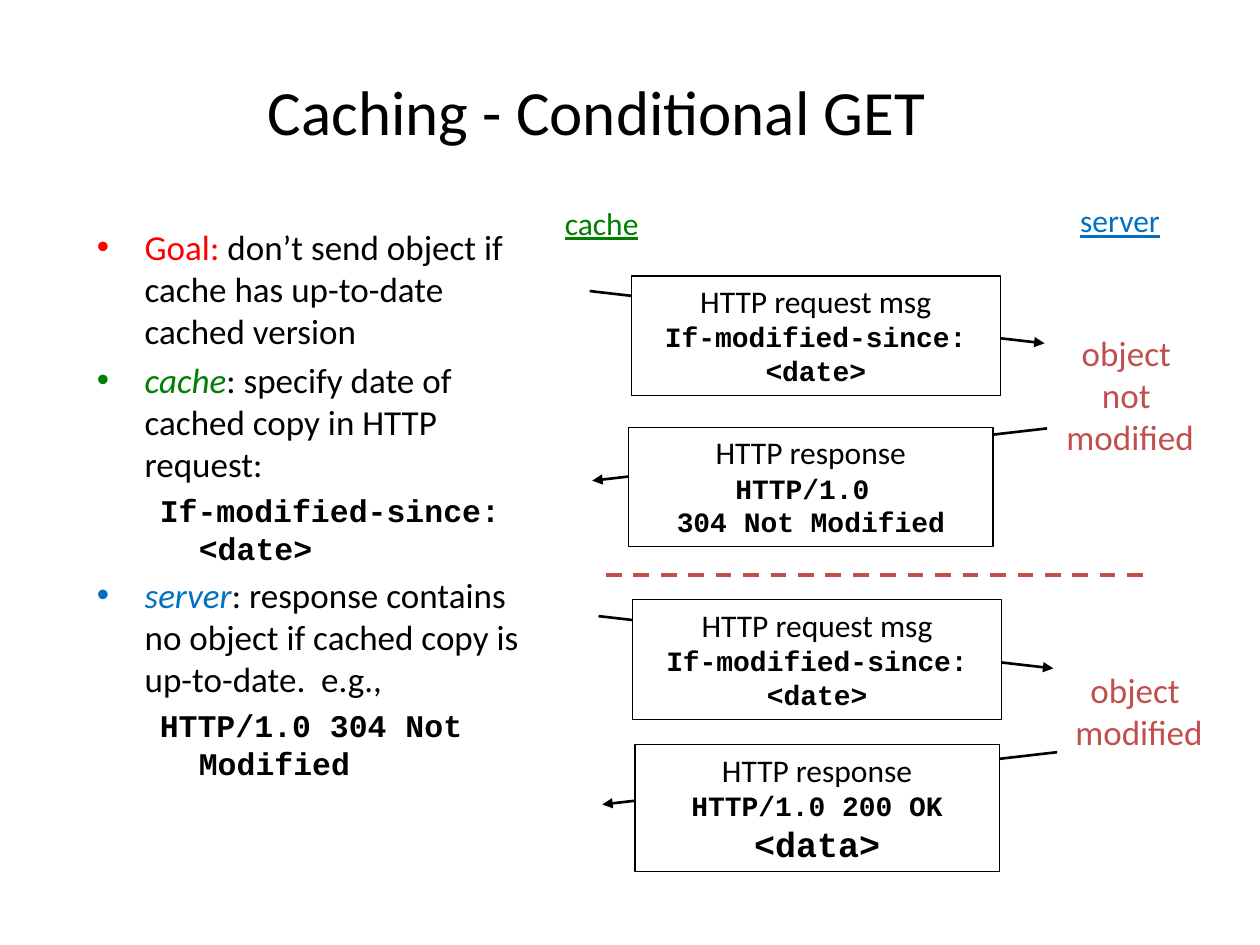
from dataclasses import dataclass

from lxml.etree import SubElement
from pptx import Presentation
from pptx.dml.color import RGBColor
from pptx.enum.dml import MSO_LINE_DASH_STYLE as Dash
from pptx.enum.shapes import MSO_CONNECTOR as Connector, MSO_SHAPE as Shape
from pptx.enum.text import MSO_ANCHOR as Anchor, PP_ALIGN as Align
from pptx.oxml.ns import qn
from pptx.util import Inches, Pt

# Grid of 100 columns by 75 rows, square cells
COLUMNS, ROWS = 100, 75
CELL = Inches(10) / COLUMNS
SANS, MONO = "Calibri", "Courier New"
COLORS = {
    "ink": "000000", "paper": "FFFFFF", "goal": "FF0000",
    "cache": "008000", "server": "0070C0", "object": "C0504D",
}


@dataclass(frozen=True)
class Line:
    text: str
    size: int = 18
    font: str = SANS
    color: str = "ink"
    underline: bool = False


@dataclass(frozen=True)
class Label:
    area: tuple[float, float, float, float]
    lines: tuple[Line, ...]
    wrap: bool = False
    anchor: Anchor = Anchor.TOP


@dataclass(frozen=True)
class Message:
    start: tuple[float, float]
    run: float  # columns to the arrow's tip
    area: tuple[float, float, float, float]
    lines: tuple[Line, ...]


@dataclass(frozen=True)
class Point:
    lead: str
    text: str
    color: str
    code: str = ""


def cells(*lengths: float) -> list[int]:
    return [round(length * CELL) for length in lengths]


def rgb(name: str) -> RGBColor:
    return RGBColor.from_string(COLORS[name])


def set_font(font, size: int, name: str, color: str) -> None:
    font.size, font.name, font.bold = Pt(size), name, name == MONO
    font.color.rgb = rgb(color)


def write_lines(frame, lines: tuple[Line, ...]) -> None:
    for i, line in enumerate(lines):
        paragraph = frame.add_paragraph() if i else frame.paragraphs[0]
        paragraph.text = line.text
        paragraph.alignment = Align.CENTER
        set_font(paragraph.font, line.size, line.font, line.color)
        paragraph.font.underline = line.underline


def add_label(shapes, label: Label) -> None:
    frame = shapes.add_textbox(*cells(*label.area)).text_frame
    frame.word_wrap = label.wrap
    frame.vertical_anchor = label.anchor
    write_lines(frame, label.lines)


def add_line(shapes, start, end, color="ink", width=1.5):
    line = shapes.add_connector(Connector.STRAIGHT, *cells(*start, *end))
    line.line.color.rgb = rgb(color)
    line.line.width = Pt(width)
    SubElement(line._element.spPr, qn("a:effectLst"))
    return line


def add_message(shapes, message: Message) -> None:
    x, y = message.start
    arrow = add_line(shapes, (x, y), (x + message.run, y + ARROW_DROP))
    SubElement(arrow.line._get_or_add_ln(), qn("a:tailEnd"), type="triangle")
    box = shapes.add_shape(Shape.RECTANGLE, *cells(*message.area))
    box.shadow.inherit = False
    box.fill.solid()
    box.fill.fore_color.rgb = rgb("paper")
    box.line.color.rgb = rgb("ink")
    box.line.width = Pt(0.75)
    frame = box.text_frame
    frame.word_wrap = True
    frame.vertical_anchor = Anchor.TOP
    write_lines(frame, message.lines)


def indent(paragraph, left: float, hanging: float, size: int) -> None:
    properties = paragraph._p.get_or_add_pPr()
    properties.set("marL", str(Inches(left)))
    properties.set("indent", str(-Inches(hanging)))
    paragraph.space_before = Pt(size * 0.2)


def add_points(shapes, area, points: list[Point]) -> None:
    frame = shapes.add_textbox(*cells(*area)).text_frame
    frame.word_wrap = True
    for i, point in enumerate(points):
        paragraph = frame.add_paragraph() if i else frame.paragraphs[0]
        indent(paragraph, 0.38, 0.38, 20)
        properties = paragraph._p.get_or_add_pPr()
        bullet_color = SubElement(properties, qn("a:buClr"))
        SubElement(bullet_color, qn("a:srgbClr"), val=COLORS[point.color])
        SubElement(properties, qn("a:buFont"), typeface="Arial")
        SubElement(properties, qn("a:buChar"), char="•")
        set_font(paragraph.font, 20, SANS, "ink")
        lead = paragraph.add_run()
        lead.text = point.lead
        lead.font.color.rgb = rgb(point.color)
        lead.font.italic = point.color != "goal"
        paragraph.add_run().text = point.text
        if point.code:
            code = frame.add_paragraph()
            code.text = point.code
            indent(code, 0.81, 0.31, 18)
            set_font(code.font, 18, MONO, "ink")


def object_lines(*words: str) -> tuple[Line, ...]:
    return tuple(Line(word, 20, color="object") for word in words)


ARROW_DROP, ARROW_RUN = 4.15, 36.1
REQUEST = (Line("HTTP request msg"), Line("If-modified-since: <date>", 16, MONO))
RESPONSE = Line("HTTP response")

POINTS = [
    Point("Goal:", " don’t send object if cache has up-to-date cached version", "goal"),
    Point("cache", ": specify date of cached copy in HTTP request:", "cache",
          "If-modified-since: <date>"),
    Point("server", ": response contains no object if cached copy is up-to-date.  e.g.,",
          "server", "HTTP/1.0 304 Not Modified"),
]
MESSAGES = [
    Message((46.8, 23.1), ARROW_RUN, (50.1, 21.9, 29.3, 9.5), REQUEST),
    Message((83.1, 34), -ARROW_RUN, (49.9, 33.9, 28.9, 9.5),
            (RESPONSE, Line("HTTP/1.0 ", 16, MONO), Line("304 Not Modified", 16, MONO))),
    Message((47.5, 48.9), ARROW_RUN, (50.2, 47.6, 29.3, 9.5), REQUEST),
    Message((83.9, 59.7), -ARROW_RUN, (50.4, 59.1, 28.9, 10.1),
            (RESPONSE, Line("HTTP/1.0 200 OK", 16, MONO), Line("<data>", 20, MONO))),
]
LABELS = [
    Label((3.8, 2.5, 87.1, 12.5), (Line("Caching - Conditional GET", 36),),
          True, Anchor.MIDDLE),
    Label((43.8, 15.7, 7.9, 4), (Line("cache", color="cache", underline=True),)),
    Label((84.7, 15.5, 8.4, 4), (Line("server", color="server", underline=True),)),
    Label((83, 25.8, 13.4, 11), object_lines("object ", "not ", "modified")),
    Label((83.7, 52.6, 13.4, 7.7), object_lines("object ", "modified")),
]


def main() -> None:
    deck = Presentation()
    deck.slide_width, deck.slide_height = cells(COLUMNS, ROWS)
    shapes = deck.slides.add_slide(deck.slide_layouts[6]).shapes

    # Explanation on the left
    add_points(shapes, (6.7, 17.4, 37.6, 47.1), POINTS)

    # Exchanges between cache and server
    for message in MESSAGES:
        add_message(shapes, message)
    divider = add_line(shapes, (48.1, 45.6), (90.8, 45.6), "object", 2.25)
    divider.line.dash_style = Dash.DASH

    # Title, column heads and outcomes
    for label in LABELS:
        add_label(shapes, label)

    deck.save("out.pptx")


if __name__ == "__main__":
    main()
